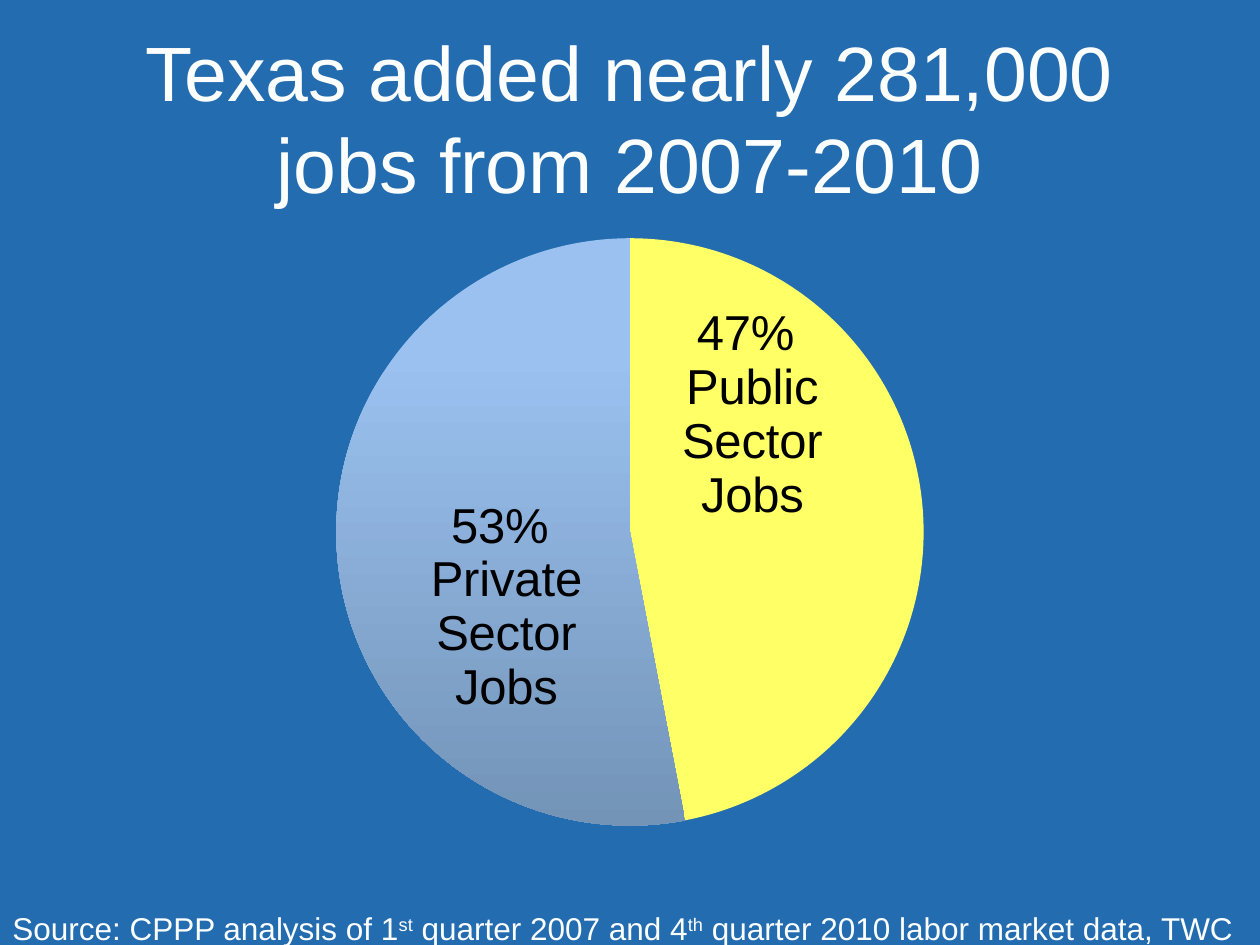
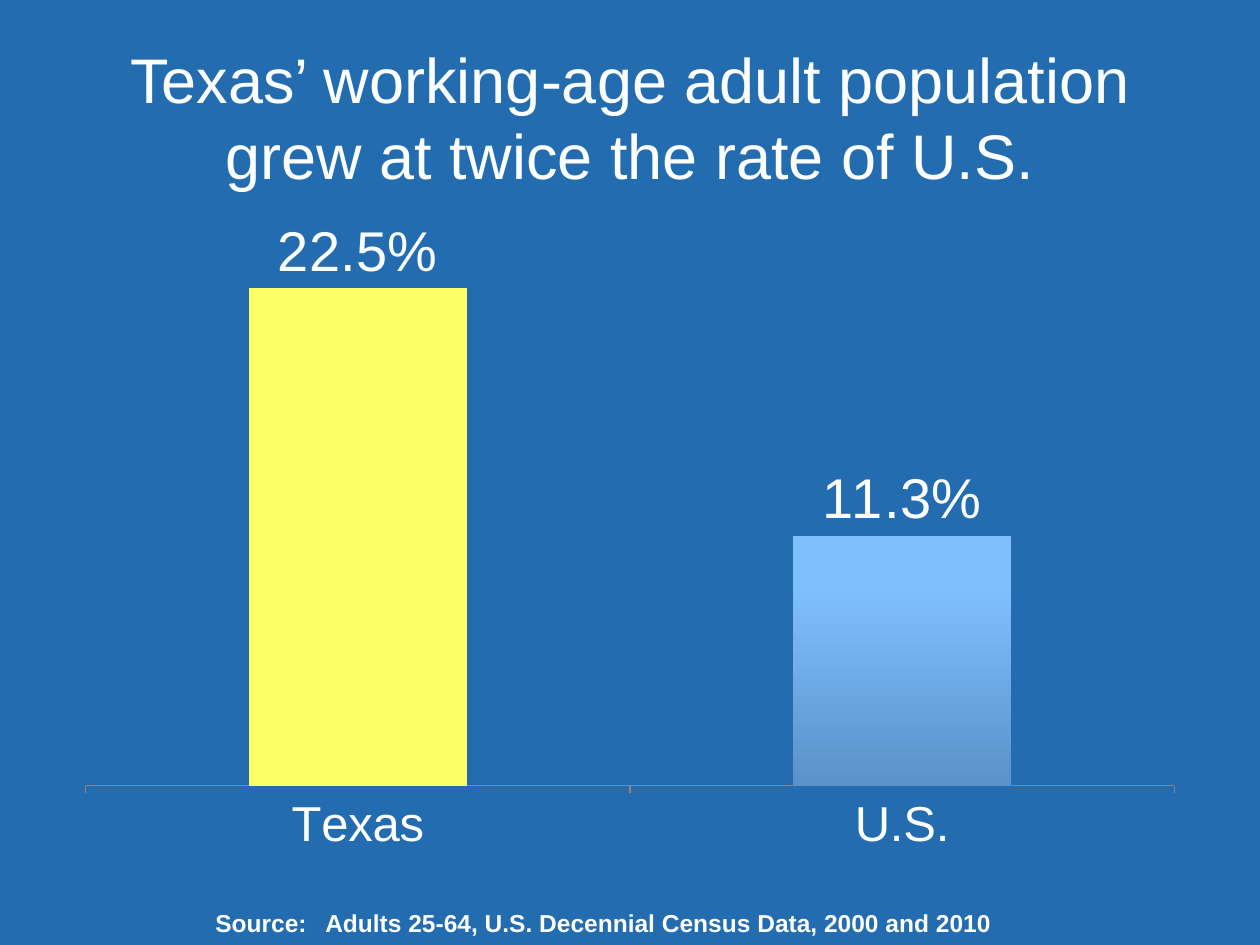
from lxml import etree
from pptx import Presentation
from pptx.chart.data import CategoryChartData
from pptx.dml.color import RGBColor
from pptx.enum.chart import XL_CHART_TYPE as ChartType
from pptx.enum.chart import XL_LABEL_POSITION as LabelPosition
from pptx.enum.chart import XL_TICK_LABEL_POSITION as TickLabels
from pptx.enum.chart import XL_TICK_MARK as TickMark
from pptx.enum.text import MSO_ANCHOR as Anchor
from pptx.enum.text import PP_ALIGN as Align
from pptx.oxml.ns import qn
from pptx.util import Emu, Pt

BLUE = RGBColor(0x23, 0x6C, 0xAF)
WHITE = RGBColor(0xFC, 0xFE, 0xFE)
BLACK = RGBColor(0x00, 0x00, 0x00)
YELLOW = RGBColor(0xFF, 0xFF, 0x66)
GREY = RGBColor(0x86, 0x86, 0x86)
PIE_SHADES = (RGBColor(0x9A, 0xC1, 0xF0), RGBColor(0x73, 0x94, 0xB7))
BAR_SHADES = (RGBColor(0x80, 0xBF, 0xFF), RGBColor(0x5A, 0x92, 0xCA))
FONT = "Arial"
PX_PER_INCH = 126


def px(length):
    return Emu(round(length * 914400 / PX_PER_INCH))


def style_font(font, size, color, bold=False):
    font.name = FONT
    font.size = Pt(size)
    font.color.rgb = color
    font.bold = bold


def set_layout(parent, index, **values):
    """Give a plot area or a data label a manual layout."""
    for old in parent.findall(qn("c:layout")):
        parent.remove(old)
    layout = etree.Element(qn("c:layout"))
    manual = etree.SubElement(layout, qn("c:manualLayout"))
    for name, value in values.items():
        etree.SubElement(manual, qn(f"c:{name}")).set("val", str(value))
    parent.insert(index, layout)


def set_plot(chart, x, y, w, h):
    set_layout(chart._chartSpace.chart.plotArea, 0, layoutTarget="inner",
               xMode="edge", yMode="edge", x=x, y=y, w=w, h=h)


def paint(point, colors):
    """Fill with one colour, or shade downwards between two."""
    fill = point.format.fill
    if len(colors) == 1:
        fill.solid()
        fill.fore_color.rgb = colors[0]
    else:
        fill.gradient()
        fill.gradient_angle = 270
        for stop, position, color in zip(fill.gradient_stops, (0.2, 1), colors):
            stop.position = position
            stop.color.rgb = color
    point.format.line.fill.background()


class ChartDeck:
    def __init__(self):
        self.deck = Presentation()
        self.deck.slide_width = px(1260)
        self.deck.slide_height = px(945)
        self.page = None

    def add_page(self, title, title_size):
        self.page = self.deck.slides.add_slide(self.deck.slide_layouts[6])
        background = self.page.background.fill
        background.solid()
        background.fore_color.rgb = BLUE
        para = self.add_text((63, 38, 1134, 157), Anchor.MIDDLE, Align.CENTER)
        self.add_span(para, title, title_size)

    def add_text(self, place, anchor=Anchor.TOP, align=Align.LEFT):
        box = self.page.shapes.add_textbox(*map(px, place))
        frame = box.text_frame
        frame.word_wrap = True
        frame.vertical_anchor = anchor
        para = frame.paragraphs[0]
        para.alignment = align
        return para

    def add_span(self, para, text, size, bold=False, raised=False):
        span = para.add_run()
        span.text = text
        style_font(span.font, size, WHITE, bold)
        if raised:
            span.font._element.set("baseline", "30000")

    def add_chart(self, kind, place, categories, values, number_format, fills):
        data = CategoryChartData(number_format=number_format)
        data.categories = categories
        data.add_series("Series 1", values)
        chart = self.page.shapes.add_chart(kind, *map(px, place), data).chart
        chart.has_legend = False
        chart.has_title = False
        style_font(chart.font, 18, BLACK)
        plot = chart.plots[0]
        plot.vary_by_categories = False
        for index, colors in enumerate(fills):
            paint(plot.series[0].points[index], colors)
        return chart

    def add_pie(self, place, slices):
        """Each slice is a value, a label, the label's shift and its colours."""
        values, labels, shifts, fills = zip(*slices)
        categories = [str(number) for number in range(1, len(slices) + 1)]
        chart = self.add_chart(ChartType.PIE, place, categories, values,
                               "General", fills)
        set_plot(chart, 0.241, 0.029, 0.518, 0.942)
        points = chart.plots[0].series[0].points
        for index, (lines, (dx, dy)) in enumerate(zip(labels, shifts)):
            label = points[index].data_label
            frame = label.text_frame
            for number, line in enumerate(lines):
                para = frame.add_paragraph() if number else frame.paragraphs[0]
                span = para.add_run()
                span.text = line
                style_font(span.font, 28, BLACK)
            label.position = LabelPosition.CENTER
            set_layout(label._dLbl, 1, x=round(dx / place[2], 3),
                       y=round(dy / place[3], 3))

    def add_columns(self, place, bars):
        """Each bar is a category, a value and its colours."""
        categories, values, fills = zip(*bars)
        chart = self.add_chart(ChartType.COLUMN_CLUSTERED, place, categories,
                               values, "0.0%", fills)
        set_plot(chart, 0.02, 0.02, 0.96, 0.857)
        plot = chart.plots[0]
        plot.gap_width = 150
        plot.has_data_labels = True
        labels = plot.data_labels
        labels.show_value = True
        labels.number_format = "0.0%"
        labels.number_format_is_linked = False
        labels.position = LabelPosition.OUTSIDE_END
        style_font(labels.font, 32, WHITE)

        value_axis = chart.value_axis
        value_axis.minimum_scale = 0
        value_axis.maximum_scale = 0.25
        value_axis.has_major_gridlines = False
        value_axis.visible = False

        category_axis = chart.category_axis
        category_axis.major_tick_mark = TickMark.OUTSIDE
        category_axis.tick_label_position = TickLabels.NEXT_TO_AXIS
        category_axis.format.line.color.rgb = GREY
        style_font(category_axis.tick_labels.font, 28, WHITE)


def add_jobs_page(charts):
    charts.add_page("Texas added nearly 281,000 jobs from 2007-2010", 44)
    charts.add_pie((63, 220, 1134, 624), [
        (47, ("47% ", "Public Sector Jobs"), (-24, -103), (YELLOW,)),
        (53, ("53% ", "Private Sector Jobs"), (23, 62), PIE_SHADES),
    ])
    source = charts.add_text((0, 903, 1260, 50))
    for text, raised in [
        ("Source: CPPP analysis of 1", False), ("st", True),
        (" quarter 2007 and 4", False), ("th", True),
        (" quarter 2010 labor market data, TWC", False),
    ]:
        charts.add_span(source, text, 18, raised=raised)


def add_population_page(charts):
    charts.add_page("Texas’ working-age adult population "
                    "grew at twice the rate of U.S.", 36)
    charts.add_columns((63, 220, 1134, 645), [
        ("Texas", 0.225, (YELLOW,)),
        ("U.S.", 0.113, BAR_SHADES),
    ])
    source = charts.add_text((0, 902, 1207, 43), align=Align.CENTER)
    indent = px(110)
    properties = source._p.get_or_add_pPr()
    properties.set("marL", str(indent))
    properties.set("indent", str(-indent))
    charts.add_span(source, "Source:\tAdults 25-64, U.S. Decennial Census Data, "
                    "2000 and 2010", 14, bold=True)


def main():
    charts = ChartDeck()
    add_jobs_page(charts)
    add_population_page(charts)
    charts.deck.save("out.pptx")


if __name__ == "__main__":
    main()
